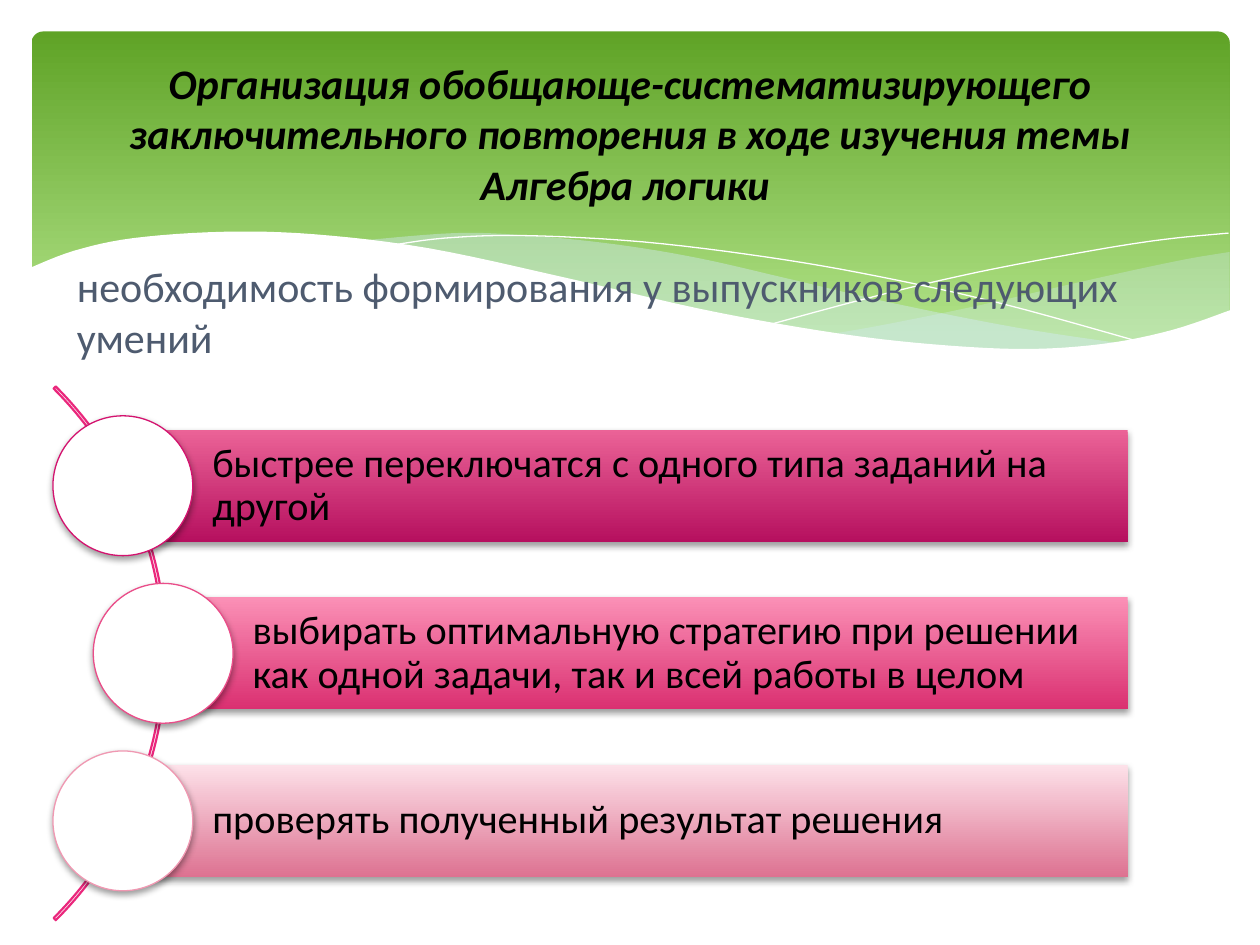
from dataclasses import dataclass

from lxml import etree
from pptx import Presentation
from pptx.dml.color import RGBColor
from pptx.enum import shapes, text
from pptx.oxml import ns
from pptx.util import Inches, Pt


@dataclass(frozen=True)
class Theme:
    """Colours, font and type sizes of the slide."""
    font: str = "Calibri"
    heading: int = 24
    item: int = 23
    ink: str = "000000"
    muted: str = "4E5B6F"
    paper: str = "FFFFFF"
    mist: str = "D6ECFF"
    header: tuple = ("5FA326", "B2E389")
    arc: str = "EA277C"


THEME = Theme()
SHAPE = shapes.MSO_SHAPE

MIST_RIGHT = [
    [(9.76, 2), (9.35, 2.07), (8.61, 2.23), (7.79, 2.42), (7.06, 2.57), (6.61, 2.65)],
    [(6.61, 2.65), (7.05, 2.71), (7.57, 2.76), (8.14, 2.78), (8.72, 2.74),
     (9.28, 2.63), (9.76, 2.47)],
]
MIST_LEFT = [
    [(8.93, 2.73), (8.07, 2.6), (7.06, 2.4), (6.29, 2.22), (5.55, 2.05),
     (4.89, 1.94), (4.2, 1.87), (3.61, 1.85), (2.86, 1.91)],
    [(2.86, 1.91), (3.62, 2.03), (4.49, 2.22), (5.3, 2.4), (6.01, 2.55), (6.8, 2.68),
     (7.48, 2.76), (8.18, 2.78), (8.93, 2.73)],
]
THREADS = [
    [(3.09, 1.95), (3.53, 1.89), (4.16, 1.87), (5.1, 1.92), (6.08, 2.04),
     (6.95, 2.19), (7.95, 2.41), (9.07, 2.72)],
    [(6.13, 2.57), (6.95, 2.35), (7.76, 2.16), (8.66, 1.99), (9.24, 1.9), (9.75, 1.85)],
]
WHITE_WAVE = [
    [(0.23, 2.13), (0.59, 1.99), (1.06, 1.89), (1.77, 1.84), (2.5, 1.86), (3.4, 1.97),
     (4.47, 2.2), (5.55, 2.45), (6.48, 2.62), (7.26, 2.72), (8.09, 2.77),
     (8.75, 2.73), (9.3, 2.62), (9.77, 2.46)],
    [(9.77, 3.29), (0.23, 3.29)],
]

TITLE = ("Организация обобщающе-систематизирующего заключительного повторения "
         "в ходе изучения темы Алгебра логики ")
LEAD = "необходимость формирования у выпускников следующих умений"
SKILLS = [
    ("быстрее переключатся с одного типа заданий на другой",
     ("EB6397", "B6105F"), "D4136F", 0),
    ("выбирать оптимальную стратегию при решении как одной задачи, "
     "так и всей работы в целом", ("FB90B6", "DA3071"), "EA4D89", 0.32),
    ("проверять полученный результат решения", ("FDE1E9", "DD7291"), "F098B2", 0),
]


def rgb(value):
    """Turn a hex string into a colour."""
    return RGBColor.from_string(value)


def smooth(points, steps=6):
    """Return a dense Catmull-Rom curve through the points."""
    if len(points) < 3:
        return points
    ends = [points[0], *points, points[-1]]
    curve = [points[0]]
    for a, b, c, d in zip(ends, ends[1:], ends[2:], ends[3:]):
        for i in range(1, steps + 1):
            t = i / steps
            curve.append(tuple(
                (2 * q + (r - p) * t + (2 * p - 5 * q + 4 * r - v) * t ** 2
                 + (3 * q - p - 3 * r + v) * t ** 3) / 2
                for p, q, r, v in zip(a, b, c, d)))
    return curve


def add_wave(s, curves, fill=None, opacity=100):
    """Draw a filled wave, or an open hairline when no fill is given."""
    pts = [(Inches(x), Inches(y)) for curve in curves for x, y in smooth(curve)]
    builder = s.shapes.build_freeform(*pts[0], scale=1.0)
    builder.add_line_segments(pts[1:], close=fill is not None)
    sp = builder.convert_to_shape()
    sp.shadow.inherit = False
    if fill is None:
        sp.fill.background()
        sp.line.color.rgb = rgb(THEME.paper)
        sp.line.width = Pt(0)
        return
    sp.line.fill.background()
    sp.fill.solid()
    sp.fill.fore_color.rgb = rgb(fill)
    if opacity < 100:
        color = sp._element.spPr.find(".//" + ns.qn("a:srgbClr"))
        etree.SubElement(color, ns.qn("a:alpha"), val=str(opacity * 1000))


def add_preset(s, kind, box, line=None, width=0.75):
    """Add a preset shape without shadow, outlined only if a line colour is given."""
    sp = s.shapes.add_shape(kind, *map(Inches, box))
    sp.shadow.inherit = False
    if line:
        sp.line.color.rgb = rgb(line)
        sp.line.width = Pt(width)
    else:
        sp.line.fill.background()
    return sp


def fill_gradient(sp, colors, end=1.0):
    """Fill a shape with a gradient running from top to bottom."""
    sp.fill.gradient()
    sp.fill.gradient_angle = 270
    for stop, color, position in zip(sp.fill.gradient_stops, colors, (0, end)):
        stop.color.rgb = rgb(color)
        stop.position = position


def add_shadow(sp):
    """Give a shape a soft shadow below it."""
    effects = sp._element.spPr.find(ns.qn("a:effectLst"))
    shadow = etree.SubElement(effects, ns.qn("a:outerShdw"), blurRad=str(Pt(4)),
                              dist=str(Pt(2)), dir="5400000", rotWithShape="0")
    color = etree.SubElement(shadow, ns.qn("a:srgbClr"), val=THEME.ink)
    etree.SubElement(color, ns.qn("a:alpha"), val="38000")


def write(sp, words, size, color, align, anchor):
    """Write one paragraph into a shape and return it."""
    tf = sp.text_frame
    tf.word_wrap = True
    tf.auto_size = text.MSO_AUTO_SIZE.NONE
    tf.vertical_anchor = anchor
    p = tf.paragraphs[0]
    p.text = words
    p.alignment = align
    p.font.name, p.font.size, p.font.color.rgb = THEME.font, Pt(size), rgb(color)
    return p


def place(s, sp, box):
    """Move a placeholder to a box, in front of everything drawn so far."""
    sp.left, sp.top, sp.width, sp.height = map(Inches, box)
    s.shapes._spTree.append(sp._element)


def add_header(s, box):
    """Draw the green header and the waves along its lower edge."""
    sp = add_preset(s, SHAPE.ROUNDED_RECTANGLE, box)
    sp.adjustments[0] = 0.034
    fill_gradient(sp, THEME.header, 0.9)
    add_wave(s, MIST_RIGHT, THEME.mist, 29)
    add_wave(s, MIST_LEFT, THEME.mist, 40)
    for thread in THREADS:
        add_wave(s, [thread])
    add_wave(s, WHITE_WAVE, THEME.paper)


def add_lead(s, box):
    """Place the lead sentence in the body placeholder."""
    sp = s.placeholders[1]
    place(s, sp, box)
    p = write(sp, LEAD, THEME.heading, THEME.muted,
              text.PP_ALIGN.LEFT, text.MSO_ANCHOR.TOP)
    pPr = p._p.get_or_add_pPr()
    pPr.set("marL", "0")
    pPr.set("indent", "0")
    pPr.insert_element_before(etree.Element(ns.qn("a:buNone")), "a:defRPr")


def add_title(s, box):
    """Place the slide title."""
    place(s, s.shapes.title, box)
    p = write(s.shapes.title, TITLE, THEME.heading, THEME.ink,
              text.PP_ALIGN.CENTER, text.MSO_ANCHOR.MIDDLE)
    p.font.bold = p.font.italic = True


def add_skills(s, box, pitch=1.33, bar=0.89, disc=1.11):
    """Draw the arc and a bar with a disc for every skill."""
    left, top, width, _ = box
    arc = add_preset(s, SHAPE.BLOCK_ARC, (-4.67, 2.19, 5.99, 5.99), THEME.arc, 1.25)
    arc.fill.background()
    for i, value in enumerate((189, 27, 0.004)):
        arc.adjustments[i] = value
    for i, (words, colors, outline, shift) in enumerate(SKILLS):
        x, y = left + shift, top + i * pitch
        start = x + disc / 2
        sp = add_preset(s, SHAPE.RECTANGLE,
                        (start, y + (disc - bar) / 2, left + width - start, bar))
        fill_gradient(sp, colors)
        add_shadow(sp)
        p = write(sp, words, THEME.item, THEME.ink,
                  text.PP_ALIGN.LEFT, text.MSO_ANCHOR.MIDDLE)
        p.line_spacing = 0.9
        tf = sp.text_frame
        tf.margin_left = Inches(0.71)
        tf.margin_right = tf.margin_top = tf.margin_bottom = Inches(0.06)
        sp = add_preset(s, SHAPE.OVAL, (x, y, disc, disc), outline)
        sp.fill.solid()
        sp.fill.fore_color.rgb = rgb(THEME.paper)
        add_shadow(sp)


def main():
    """Build the slide and save it."""
    prs = Presentation()
    prs.slide_width, prs.slide_height = Inches(10), Inches(7.5)
    s = prs.slides.add_slide(prs.slide_layouts[1])
    add_header(s, (0.25, 0.25, 9.51, 2.7))
    add_lead(s, (0.51, 2.02, 8.54, 1.18))
    add_title(s, (0.5, 0.37, 9, 1.37))
    add_skills(s, (0.42, 3.3, 8.53, 3.77))
    prs.save("out.pptx")


if __name__ == "__main__":
    main()
